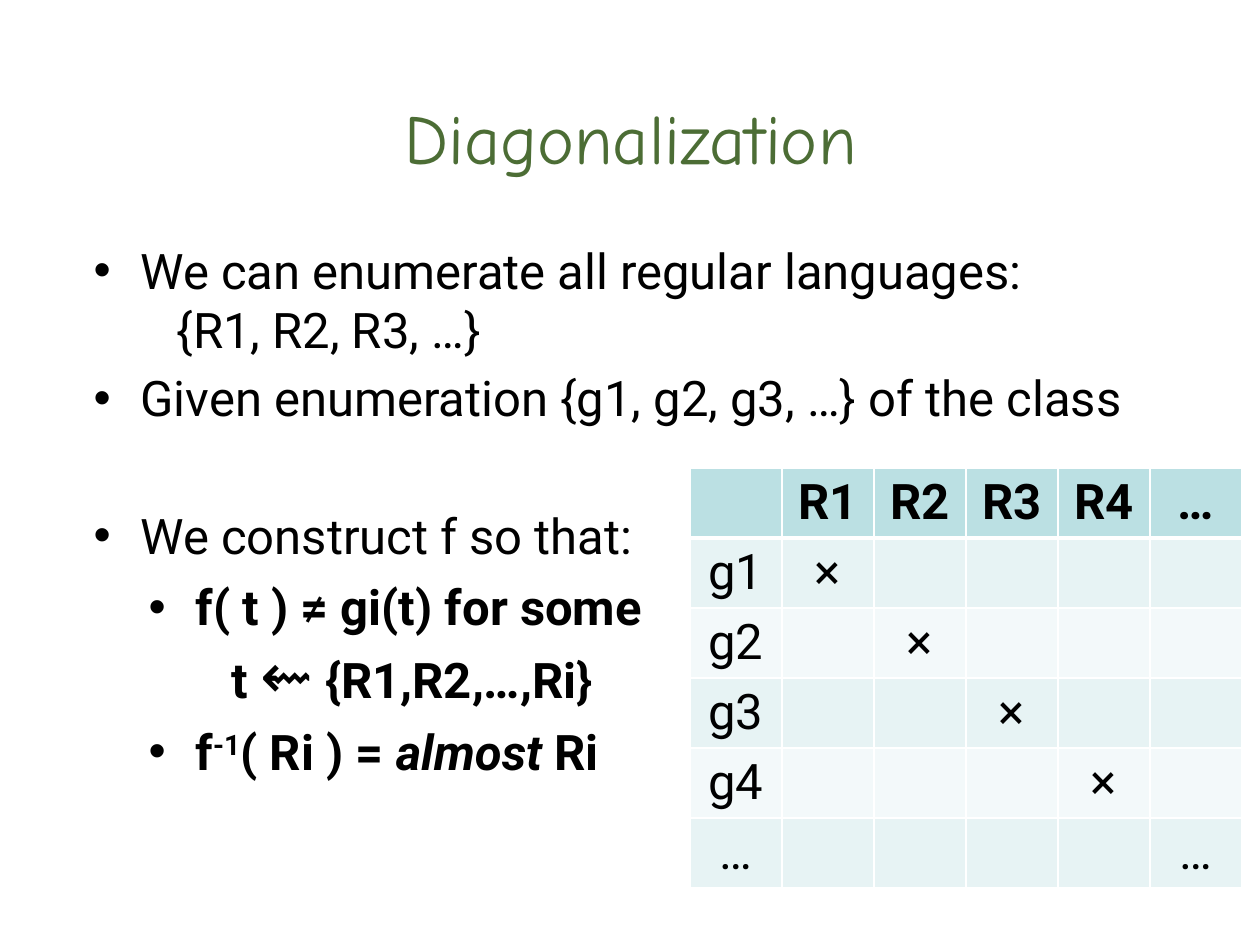
from lxml.etree import SubElement
from pptx import Presentation
from pptx.dml.color import RGBColor
from pptx.enum.text import MSO_ANCHOR, MSO_AUTO_SIZE, PP_ALIGN
from pptx.oxml.ns import qn
from pptx.util import Pt

PIXEL = 914400 / 126
HEADERS = ["", "R1", "R2", "R3", "R4", "…"]
ROW_NAMES = ["g1", "g2", "g3", "g4", "…"]


def px(length):
    """Turn pixels into EMU."""
    return round(length * PIXEL)


def color(value):
    """Turn a hex string into a colour."""
    return RGBColor.from_string(value)


def place(shape, box):
    """Move a shape to a box of left, top, width and height."""
    shape.left, shape.top, shape.width, shape.height = map(px, box)


def style(paragraph, size, bold=False, name="Roboto", fill="000000"):
    """Set the font shared by all runs of a paragraph."""
    font = paragraph.font
    font.size, font.bold, font.name = Pt(size), bold, name
    font.color.rgb = color(fill)


def add_title(slide, box, text):
    """Fill the title placeholder."""
    title = slide.shapes.title
    place(title, box)
    frame = title.text_frame
    frame.auto_size = MSO_AUTO_SIZE.NONE
    frame.vertical_anchor = MSO_ANCHOR.MIDDLE
    frame.text = text
    paragraph = frame.paragraphs[0]
    paragraph.alignment = PP_ALIGN.CENTER
    style(paragraph, 40, name="Comic Neue", fill="4C6D35")


def set_bullet(paragraph, margin, bulleted):
    """Give a paragraph its margin and a bullet, or an indent without one."""
    properties = paragraph._p.get_or_add_pPr()
    properties.set("marL", str(px(margin if bulleted else margin + 36)))
    properties.set("indent", str(px(-47 if bulleted else 0)))
    if bulleted:
        SubElement(properties, qn("a:buChar")).set("char", "•")
    else:
        SubElement(properties, qn("a:buNone"))


def add_body(slide, box):
    """Fill the body placeholder with the two-level list."""
    body = slide.placeholders[1]
    place(body, box)
    frame = body.text_frame
    frame.auto_size = MSO_AUTO_SIZE.NONE
    items = [
        (0, True, 0, ["We can enumerate all regular languages:"]),
        (0, False, 0, ["{R1, R2, R3, …}"]),
        (0, True, 5.6, ["Given enumeration {g1, g2, g3, …} of the class"]),
        (0, True, 45, ["We construct f so that:"]),
        (1, True, 7.2, ["f( t ) ≠ gi(t) for some"]),
        (1, False, 0, ["t ", "⇜", " {R1,R2,…,Ri}"]),
        (1, True, 5.6, ["f", "-1", "( Ri ) = ", "almost ", "Ri"]),
    ]
    for index, (level, bulleted, space, texts) in enumerate(items):
        paragraph = frame.add_paragraph() if index else frame.paragraphs[0]
        paragraph.level = level
        paragraph.space_before = Pt(space)
        set_bullet(paragraph, (47, 102)[level], bulleted)
        style(paragraph, 28, bold=level == 1)
        for text in texts:
            run = paragraph.add_run()
            run.text = text
            if text == "⇜":
                run.font.size, run.font.bold = Pt(36), False
            elif text == "-1":
                run._r.get_or_add_rPr().set("baseline", "30000")
            elif text == "almost ":
                run.font.italic = True


def set_borders(cell, bottom):
    """Draw white cell borders, with the bottom one of a given width."""
    properties = cell._tc.get_or_add_tcPr()
    widths = {"a:lnL": 1, "a:lnR": 1, "a:lnT": 1, "a:lnB": bottom}
    for tag, width in widths.items():
        line = SubElement(properties, qn(tag), w=str(Pt(width)))
        fill = SubElement(line, qn("a:solidFill"))
        SubElement(fill, qn("a:srgbClr"), val="FFFFFF")


def add_diagonal_table(slide, box):
    """Add the table whose diagonal is marked."""
    rows = [HEADERS]
    for index, name in enumerate(ROW_NAMES, start=1):
        mark = "…" if name == "…" else "×"
        rows.append([name] + [mark if column == index else "" for column in range(1, len(HEADERS))])
    table = slide.shapes.add_table(len(rows), len(HEADERS), *map(px, box)).table
    table.horz_banding = False
    for row_index, texts in enumerate(rows):
        header = row_index == 0
        fill = "BBE0E3" if header else ("F3F9FA", "E7F3F4")[row_index % 2]
        for column_index, text in enumerate(texts):
            cell = table.cell(row_index, column_index)
            set_borders(cell, 3 if header else 3 - 2)
            cell.fill.solid()
            cell.fill.fore_color.rgb = color(fill)
            cell.vertical_anchor = MSO_ANCHOR.MIDDLE
            cell.text = text
            paragraph = cell.text_frame.paragraphs[0]
            paragraph.alignment = PP_ALIGN.CENTER
            style(paragraph, 28, bold=header)


def main():
    """Build the slide and save it."""
    presentation = Presentation()
    presentation.slide_width, presentation.slide_height = px(1260), px(945)
    slide = presentation.slides.add_slide(presentation.slide_layouts[1])
    add_title(slide, (81, 68, 1099, 137), "Diagonalization")
    add_body(slide, (81, 234, 1099, 610))
    add_diagonal_table(slide, (690, 468, 552, 420))
    presentation.save("out.pptx")


if __name__ == "__main__":
    main()
